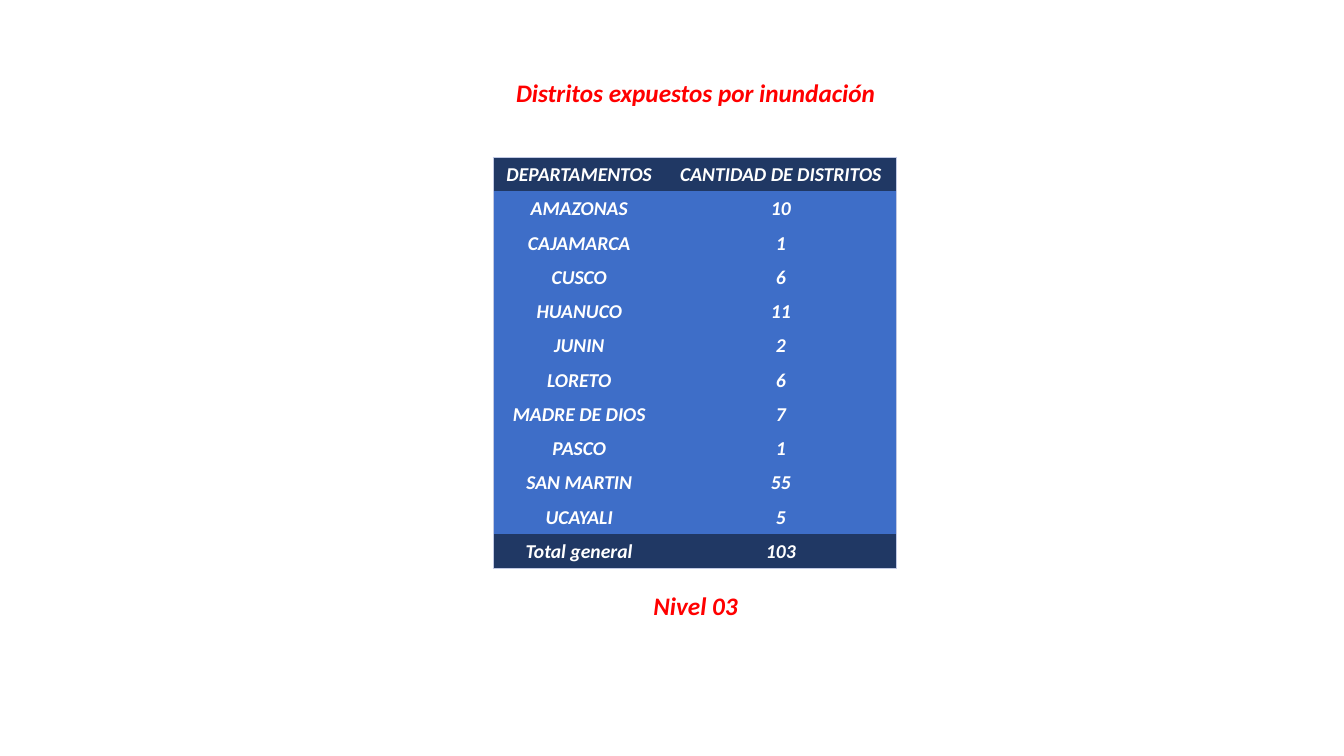
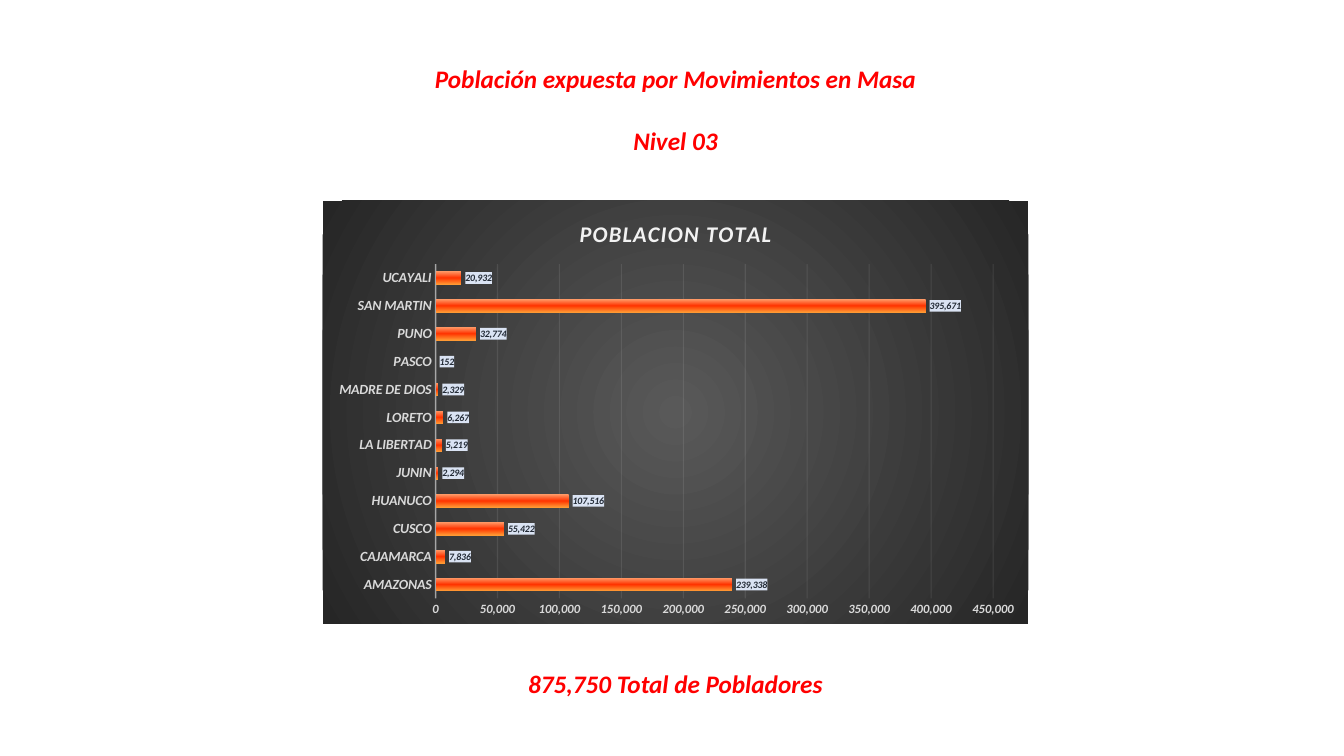
from dataclasses import dataclass

from lxml import etree
from pptx import Presentation
from pptx import util as u
from pptx.chart.data import CategoryChartData
from pptx.dml.color import RGBColor
from pptx.enum import chart as charts, text as texts
from pptx.oxml import parse_xml
from pptx.oxml.ns import nsdecls, qn


@dataclass(frozen=True)
class Theme:
    font: str = "Calibri"
    caption: str = "FF0000"
    white: str = "FFFFFF"
    table_band: str = "203864"
    table_body: str = "3E6EC8"
    table_edge: str = "C1C9E4"
    chart_title: str = "F2F2F2"
    chart_line: str = "F2F2F2"
    chart_text: str = "D9D9D9"
    label_text: str = "222A35"
    label_fill: str = "DAE3F3"
    chart_back: tuple = ((0, "595959"), (100, "262626"))
    bar: tuple = ((0, "FF9966"), (50, "FF3300"), (100, "FF9933"))
    caption_size: float = 18
    table_size: float = 14
    title_size: float = 16
    category_size: float = 10
    value_size: float = 9
    label_size: float = 7


THEME = Theme()


def style_font(font, size, color):
    font.name = THEME.font
    font.size = u.Pt(size)
    font.bold = font.italic = True
    font.color.rgb = RGBColor.from_string(color)


def write_text(para, text, *, size, color, align=texts.PP_ALIGN.CENTER):
    para.alignment = align
    span = para.add_run()
    span.text = text
    style_font(span.font, size, color)
    return span


def solid_xml(color, spaces=""):
    return f'<a:solidFill {spaces}><a:srgbClr val="{color}"/></a:solidFill>'


def gradient_xml(stops, direction):
    marks = "".join(f'<a:gs pos="{place * 1000}"><a:srgbClr val="{color}"/></a:gs>'
                    for place, color in stops)
    return f'<a:gradFill {nsdecls("a")}><a:gsLst>{marks}</a:gsLst>{direction}</a:gradFill>'


def fill_before_text(parent, fill):
    """Give a chart part a background; its spPr must come before txPr."""
    area = parse_xml(f'<c:spPr {nsdecls("c", "a")}>{fill}<a:ln><a:noFill/></a:ln></c:spPr>')
    parent.find(qn("c:txPr")).addprevious(area)


def style_line(line, width, color):
    line.width = u.Pt(width)
    line.color.rgb = RGBColor.from_string(color)


def set_opacity(chart, place, percent):
    for color in chart.element.xpath(f".//{place}/c:spPr/a:ln//a:srgbClr"):
        etree.SubElement(color, qn("a:alpha")).set("val", str(percent * 1000))


def place_plot(chart, **shares):
    """Fix the inner plot area as shares of the chart's width and height."""
    area = chart.element.xpath(".//c:plotArea")[0]
    for layout in area.findall(qn("c:layout")):
        area.remove(layout)
    sizes = "".join(f'<c:{name} val="{share}"/>' for name, share in shares.items())
    area.insert(0, parse_xml(
        f'<c:layout {nsdecls("c")}><c:manualLayout><c:layoutTarget val="inner"/>'
        f'<c:xMode val="edge"/><c:yMode val="edge"/>{sizes}</c:manualLayout></c:layout>'))


def add_border(cell, side):
    edge = parse_xml(f'<a:ln{side} {nsdecls("a")} w="6350">'
                     f'{solid_xml(THEME.table_edge)}</a:ln{side}>')
    cell.fill.background()
    fill = cell.fill
    properties = cell._tc.get_or_add_tcPr()
    properties.find(qn("a:noFill")).addprevious(edge)
    return fill


class SlideBuilder:
    def __init__(self, deck):
        self.deck = deck
        self.slide = None

    def new_slide(self):
        self.slide = self.deck.slides.add_slide(self.deck.slide_layouts[6])

    def caption(self, text, center, top, width, wrap=True):
        box = self.slide.shapes.add_textbox(
            u.Inches(center - width / 2), u.Inches(top), u.Inches(width), u.Inches(0.4))
        box.text_frame.word_wrap = wrap
        write_text(box.text_frame.paragraphs[0], text,
                   size=THEME.caption_size, color=THEME.caption)

    def table(self, rows, left, top, widths, row_height):
        """Table with dark first and last rows and an outer border only."""
        frame = self.slide.shapes.add_table(
            len(rows), len(widths), u.Inches(left), u.Inches(top),
            u.Inches(sum(widths)), u.Inches(row_height * len(rows)))
        no_grid = "{2D5ABB26-0587-4C30-8999-92F81FD0307C}"
        frame.element.xpath(".//a:tableStyleId")[0].text = no_grid
        table = frame.table
        table.first_row = table.horz_banding = False
        for column, width in zip(table.columns, widths):
            column.width = u.Inches(width)
        last_row, last_column = len(rows) - 1, len(widths) - 1
        for r, values in enumerate(rows):
            table.rows[r].height = u.Inches(row_height)
            for c, value in enumerate(values):
                cell = table.cell(r, c)
                cell.margin_left = cell.margin_right = cell.margin_top = u.Inches(0.01)
                cell.margin_bottom = 0
                cell.vertical_anchor = texts.MSO_ANCHOR.MIDDLE
                write_text(cell.text_frame.paragraphs[0], str(value),
                           size=THEME.table_size, color=THEME.white)
                edges = {"L": c == 0, "R": c == last_column,
                         "T": r == 0, "B": r == last_row}
                for side, outer in edges.items():
                    if outer:
                        add_border(cell, side)
                cell.fill.solid()
                cell.fill.fore_color.rgb = RGBColor.from_string(
                    THEME.table_band if r in (0, last_row) else THEME.table_body)

    def bar_chart(self, title, values, left, top, width, height):
        data = CategoryChartData(number_format="#,##0")
        data.categories = list(values)
        data.add_series("Series 1", list(values.values()))
        chart = self.slide.shapes.add_chart(
            charts.XL_CHART_TYPE.BAR_CLUSTERED, u.Inches(left), u.Inches(top),
            u.Inches(width), u.Inches(height), data).chart
        chart.has_legend = False
        style_font(chart.font, THEME.category_size, THEME.chart_text)
        center = '<a:fillToRect l="50000" t="50000" r="50000" b="50000"/>'
        fill_before_text(chart.element, gradient_xml(
            THEME.chart_back, f'<a:path path="circle">{center}</a:path>'))
        self.chart_title(chart, title)
        self.chart_axes(chart)
        self.chart_bars(chart.plots[0])
        place_plot(chart, x=0.16, y=0.15, w=0.79, h=0.79)

    def chart_title(self, chart, title):
        chart.has_title = True
        chart.chart_title.include_in_layout = False
        span = write_text(chart.chart_title.text_frame.paragraphs[0], title,
                          size=THEME.title_size, color=THEME.chart_title)
        span.font._element.set("spc", "100")

    def chart_axes(self, chart):
        names, amounts = chart.category_axis, chart.value_axis
        for axis, size in ((names, THEME.category_size), (amounts, THEME.value_size)):
            axis.major_tick_mark = axis.minor_tick_mark = charts.XL_TICK_MARK.NONE
            style_font(axis.tick_labels.font, size, THEME.chart_text)
        style_line(names.format.line, 1, THEME.chart_line)
        set_opacity(chart, "c:catAx", 54)
        amounts.format.line.fill.background()
        amounts.minimum_scale, amounts.maximum_scale = 0, 450000
        amounts.major_unit = 50000
        amounts.tick_labels.number_format = "#,##0"
        amounts.tick_labels.number_format_is_linked = False
        amounts.has_major_gridlines = True
        style_line(amounts.major_gridlines.format.line, 0.75, THEME.chart_line)
        set_opacity(chart, "c:majorGridlines", 10)

    def chart_bars(self, plot):
        plot.gap_width, plot.overlap = 115, -20
        plot.vary_by_categories = False
        series = plot.series[0]
        series.invert_if_negative = False
        series.format.fill.solid()
        solid = series._element.xpath("./c:spPr/a:solidFill")[0]
        solid.getparent().replace(solid, parse_xml(
            gradient_xml(THEME.bar, '<a:lin ang="5400000" scaled="0"/>')))
        labels = series.data_labels
        labels.show_value = True
        labels.position = charts.XL_LABEL_POSITION.OUTSIDE_END
        labels.number_format = "#,##0"
        labels.number_format_is_linked = False
        style_font(labels.font, THEME.label_size, THEME.label_text)
        fill_before_text(labels._element, solid_xml(THEME.label_fill))


def flood_slide(builder):
    districts = {
        "AMAZONAS": 10, "CAJAMARCA": 1, "CUSCO": 6, "HUANUCO": 11, "JUNIN": 2,
        "LORETO": 6, "MADRE DE DIOS": 7, "PASCO": 1, "SAN MARTIN": 55, "UCAYALI": 5,
    }
    rows = [("DEPARTAMENTOS", "CANTIDAD DE DISTRITOS"), *districts.items(),
            ("Total general", 103)]
    center = 6.9
    builder.new_slide()
    builder.caption("Distritos expuestos por inundación", center, 0.72, 3.8, wrap=False)
    builder.caption("Nivel 03", center, 5.81, 1.2)
    builder.table(rows, 4.89, 1.56, (1.71, 2.29), 0.34)


def landslide_slide(builder):
    population = {
        "AMAZONAS": 239338, "CAJAMARCA": 7836, "CUSCO": 55422, "HUANUCO": 107516,
        "JUNIN": 2294, "LA LIBERTAD": 5219, "LORETO": 6267, "MADRE DE DIOS": 2329,
        "PASCO": 152, "PUNO": 32774, "SAN MARTIN": 395671, "UCAYALI": 20932,
    }
    center = 6.7
    builder.new_slide()
    builder.caption("Población expuesta por Movimientos en Masa", center, 0.58, 5.03,
                    wrap=False)
    builder.caption("875,750 Total de Pobladores", center, 6.58, 3.36)
    builder.caption("Nivel 03", center, 1.19, 1.1)
    builder.bar_chart("POBLACION TOTAL", population, 3.2, 1.99, 7, 4.2)


def main():
    deck = Presentation()
    deck.slide_width, deck.slide_height = u.Inches(13.33), u.Inches(7.5)
    builder = SlideBuilder(deck)
    flood_slide(builder)
    landslide_slide(builder)
    deck.save("out.pptx")


if __name__ == "__main__":
    main()
